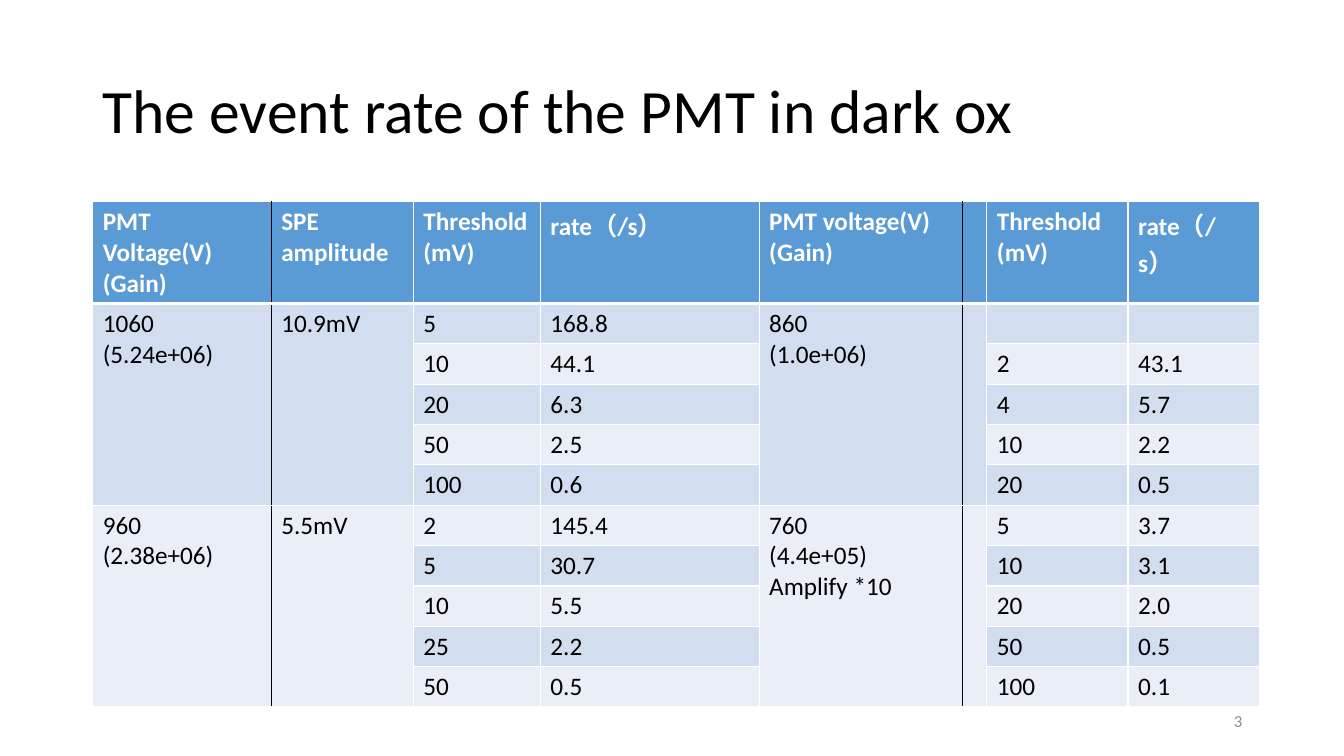
from lxml import etree
from pptx import Presentation
from pptx.dml.color import RGBColor
from pptx.enum import text as t
from pptx.oxml import ns
from pptx.util import Inches, Pt

FONT = "Calibri"
BLACK = RGBColor(0x00, 0x00, 0x00)
WHITE = RGBColor(0xFF, 0xFF, 0xFF)
GREY = RGBColor(0x8C, 0x8C, 0x8C)
HEADER_BLUE = RGBColor(0x5B, 0x9B, 0xD5)
BANDS = [RGBColor(0xD2, 0xDE, 0xEF), RGBColor(0xEA, 0xEF, 0xF7)]

COLUMN_WIDTHS = [1.77, 1.41, 1.26, 2.17, 2.02, 0.23, 1.4, 1.3]
HEADER_HEIGHT = 1.01
ROW_HEIGHT = 0.4
GROUP_SIZE = 5
MERGED_COLUMNS = [0, 1, 4, 5]
BLACK_EDGES = [1, 5]

HEADINGS = [["PMT Voltage(V)", "(Gain)"], ["SPE amplitude"], ["Threshold(mV)"],
            ["rate（/s）"], ["PMT voltage(V)", "(Gain)"], [],
            ["Threshold", "(mV)"], ["rate（/s）"]]
GROUPS = [
    [["1060", "(5.24e+06)"], ["10.9mV"], ["860", "(1.0e+06)"], []],
    [["960", "(2.38e+06)"], ["5.5mV"], ["760", "(4.4e+05)", "Amplify *10"], []],
]
RATES = [
    ("5", "168.8", "", ""),
    ("10", "44.1", "2", "43.1"),
    ("20", "6.3", "4", "5.7"),
    ("50", "2.5", "10", "2.2"),
    ("100", "0.6", "20", "0.5"),
    ("2", "145.4", "5", "3.7"),
    ("5", "30.7", "10", "3.1"),
    ("10", "5.5", "20", "2.0"),
    ("25", "2.2", "50", "0.5"),
    ("50", "0.5", "100", "0.1"),
]


def write(frame, lines, size, color, bold=False, align=t.PP_ALIGN.LEFT, spacing=None):
    for index, line in enumerate(lines):
        paragraph = frame.add_paragraph() if index else frame.paragraphs[0]
        paragraph.alignment = align
        if spacing:
            paragraph.line_spacing = spacing
        run = paragraph.add_run()
        run.text = line
        run.font.name = FONT
        run.font.size = Pt(size)
        run.font.bold = bold
        run.font.color.rgb = color


def add_label(slide, box, lines, size, color, **style):
    label = slide.shapes.add_textbox(*map(Inches, box)).text_frame
    label.word_wrap = True
    label.vertical_anchor = t.MSO_ANCHOR.MIDDLE
    write(label, lines, size, color, **style)


def set_borders(cell, row, column):
    edges = [
        ("a:lnL", BLACK if column in BLACK_EDGES else WHITE, 1),
        ("a:lnR", BLACK if column + 1 in BLACK_EDGES else WHITE, 1),
        ("a:lnT", WHITE, 3 if row == 1 else 1),
        ("a:lnB", WHITE, 3 if row == 0 else 1),
    ]
    properties = cell._tc.get_or_add_tcPr()
    for position, (tag, color, width) in enumerate(edges):
        edge = etree.Element(ns.qn(tag), w=str(Pt(width)))
        fill = etree.SubElement(edge, ns.qn("a:solidFill"))
        etree.SubElement(fill, ns.qn("a:srgbClr"), val=str(color))
        properties.insert(position, edge)


def cell_lines(row, column):
    if row == 0:
        return HEADINGS[column]
    if column in MERGED_COLUMNS:
        group, offset = divmod(row - 1, GROUP_SIZE)
        return [] if offset else GROUPS[group][MERGED_COLUMNS.index(column)]
    value = RATES[row - 1][[2, 3, 6, 7].index(column)]
    return [value] if value else []


def add_rate_table(slide, left, top):
    row_count = len(RATES) + 1
    height = HEADER_HEIGHT + ROW_HEIGHT * len(RATES)
    rates = slide.shapes.add_table(
        row_count, len(COLUMN_WIDTHS), Inches(left), Inches(top),
        Inches(sum(COLUMN_WIDTHS)), Inches(height)).table
    for column, width in zip(rates.columns, COLUMN_WIDTHS):
        column.width = Inches(width)
    for row in range(row_count):
        rates.rows[row].height = Inches(ROW_HEIGHT if row else HEADER_HEIGHT)
        for column in range(len(COLUMN_WIDTHS)):
            cell = rates.cell(row, column)
            cell.fill.solid()
            cell.fill.fore_color.rgb = BANDS[(row - 1) % 2] if row else HEADER_BLUE
            set_borders(cell, row, column)
            write(cell.text_frame, cell_lines(row, column), 18,
                  BLACK if row else WHITE, bold=row == 0)
    for first in range(1, row_count, GROUP_SIZE):
        for column in MERGED_COLUMNS:
            rates.cell(first, column).merge(rates.cell(first + GROUP_SIZE - 1, column))


def main():
    deck = Presentation()
    deck.slide_width = Inches(13.33)
    deck.slide_height = Inches(7.5)
    slide = deck.slides.add_slide(deck.slide_layouts[6])
    add_label(slide, (0.92, 0.4, 11.5, 1.45),
              ["The event rate of the PMT in dark ox"], 44, BLACK, spacing=0.9)
    add_rate_table(slide, 0.92, 2)
    add_label(slide, (9.42, 6.95, 3, 0.4), ["3"], 12, GREY, align=t.PP_ALIGN.RIGHT)
    deck.save("out.pptx")


if __name__ == "__main__":
    main()
